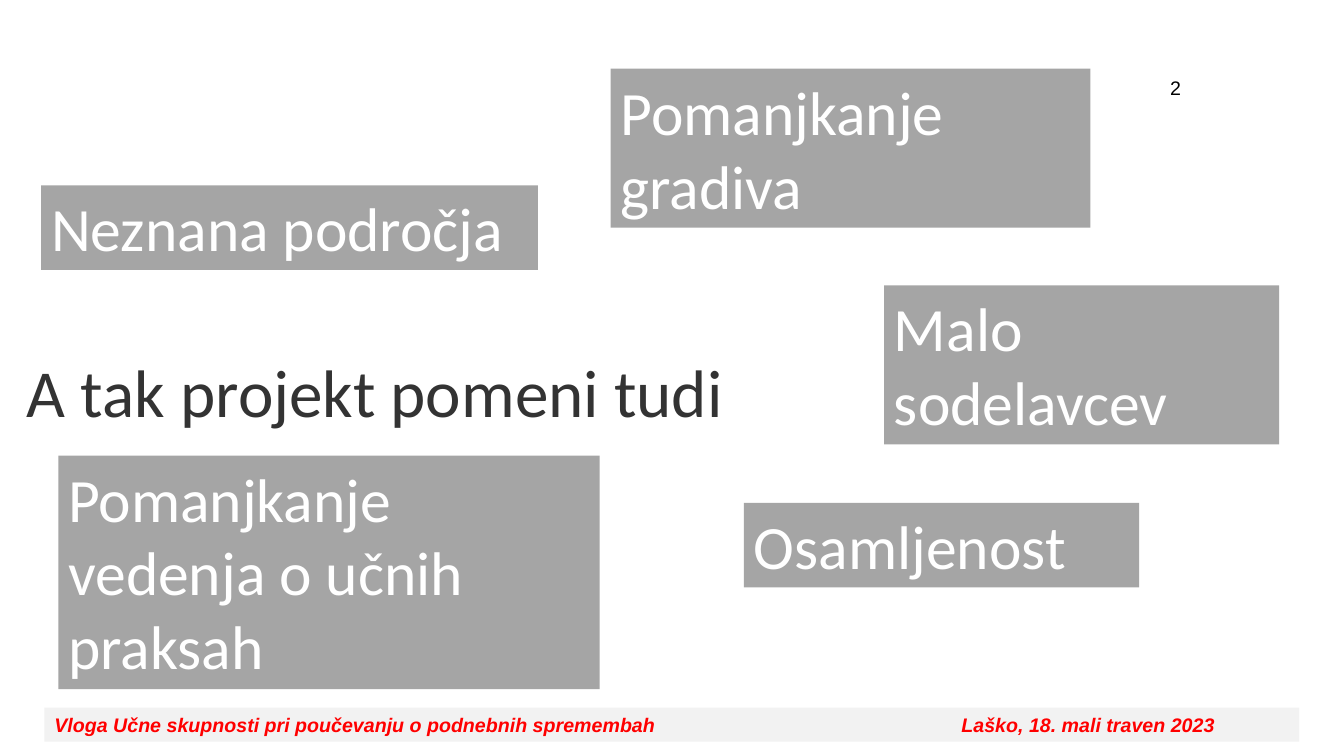
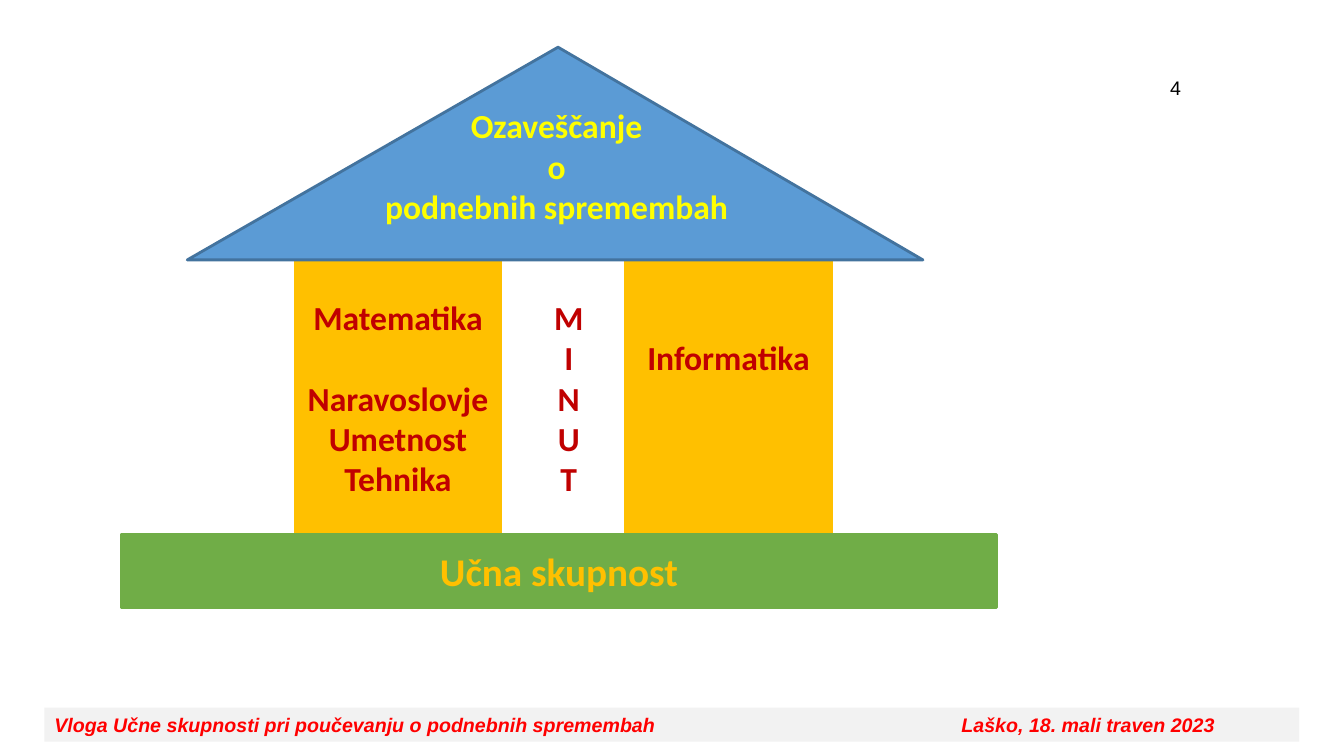
from lxml import etree
from pptx import Presentation
from pptx.dml.color import RGBColor
from pptx.enum.shapes import MSO_SHAPE
from pptx.enum.text import MSO_ANCHOR, PP_ALIGN
from pptx.oxml.ns import qn
from pptx.util import Cm, Pt

RED, GOLD, GREY, WHITE = "C00000", "FFC000", "A5A5A5", "FFFFFF"
LINE_CM = 1.03  # height of one 24 pt line

PAGE_NUMBER = dict(name="Arial", size=Pt(14))
FOOTER = dict(name="Arial", size=Pt(14), bold=True, italic=True)
TITLE = dict(name="Calibri", size=Pt(48))
KEYWORD = dict(name="Calibri", size=Pt(44))
LABEL = dict(name="Calibri", size=Pt(24), bold=True)
BASE_LABEL = dict(name="Calibri", size=Pt(28), bold=True)


def rgb(value):
    return RGBColor.from_string(value)


def add_box(s, box, lines, font, color, fill=None, line=None,
            shape=MSO_SHAPE.RECTANGLE, align=PP_ALIGN.LEFT, anchor=MSO_ANCHOR.TOP):
    """Add a text box, or a preset shape when a fill is given, one paragraph per line."""
    place = [Cm(v) for v in box]
    if fill:
        sp = s.shapes.add_shape(shape, *place)
        sp.shadow.inherit = False
        sp.fill.solid()
        sp.fill.fore_color.rgb = rgb(fill)
        if line:
            sp.line.color.rgb = rgb(line)
            sp.line.width = Pt(2)
        else:
            sp.line.fill.background()
    else:
        sp = s.shapes.add_textbox(*place)
    tf = sp.text_frame
    tf.word_wrap = True
    tf.vertical_anchor = anchor
    for i, text in enumerate(lines):
        p = tf.add_paragraph() if i else tf.paragraphs[0]
        p.alignment = align
        r = p.add_run()
        r.text = text
        r.font.color.rgb = rgb(color)
        for key, value in font.items():
            setattr(r.font, key, value)
    return sp


prs = Presentation()
prs.slide_width, prs.slide_height = Cm(33.87), Cm(19.05)

# Page number and footer band on both slides
slides = []
for number in ("2", "4"):
    s = prs.slides.add_slide(prs.slide_layouts[6])
    slides.append(s)
    add_box(s, (29.24, 1.8, 1.3, 0.86), [number], PAGE_NUMBER, "000000")
    footer = add_box(
        s, (1.12, 17.83, 31.62, 0.86),
        ["Vloga Učne skupnosti pri poučevanju o podnebnih spremembah\tLaško, 18. mali traven 2023"],
        FOOTER, "FF0000", fill="EDEDED", anchor=MSO_ANCHOR.MIDDLE)
    band_color = footer._element.spPr.find(qn("a:solidFill"))[0]
    etree.SubElement(band_color, qn("a:alpha")).set("val", "71000")
    pPr = footer.text_frame.paragraphs[0]._p.get_or_add_pPr()
    tabs = etree.SubElement(pPr, qn("a:tabLst"))
    tab = etree.SubElement(tabs, qn("a:tab"))
    tab.set("pos", str(Cm(22.86)))
    tab.set("algn", "l")

# Slide with the difficulties
s = slides[0]
title = add_box(s, (0.43, 7.57, 33, 3.43), ["A tak projekt pomeni tudi"],
                TITLE, "333333", anchor=MSO_ANCHOR.BOTTOM)
title.text_frame.paragraphs[0].line_spacing = 0.9

for text, box in [
    ("Pomanjkanje gradiva", (15.39, 1.73, 12.09, 4.01)),
    ("Malo sodelavcev", (22.28, 7.19, 9.96, 4.01)),
    ("Neznana področja", (1.04, 4.67, 12.52, 2.13)),
    ("Osamljenost", (18.75, 12.67, 9.96, 2.13)),
    ("Pomanjkanje vedenja o učnih praksah", (1.47, 11.48, 13.64, 5.89)),
]:
    add_box(s, box, [text], KEYWORD, WHITE, fill=GREY)

# Slide with the house: columns, roof and base
s = slides[1]
centred = dict(align=PP_ALIGN.CENTER, anchor=MSO_ANCHOR.MIDDLE)
columns = []
for left, width, fill, lines in [
    (15.77, 5.18, GOLD, ["Informatika"]),
    (13.61, 1.45, WHITE, "MINUT"),
    (7.44, 5.18, GOLD, ["Matematika", "Naravoslovje", "Umetnost", "Tehnika"]),
]:
    columns.append(add_box(s, (left, 6.58, width, 6.88), lines, LABEL, RED,
                           fill=fill, line=fill, **centred))
informatics, _, subjects = columns
subjects.text_frame.paragraphs[0].space_after = Pt(29)

roof = add_box(s, (4.72, 1.19, 18.54, 5.36), ["Ozaveščanje", "o", "podnebnih spremembah"],
               LABEL, "FFFF00", fill="5B9BD5", line="43739E",
               shape=MSO_SHAPE.ISOSCELES_TRIANGLE, **centred)
roof.adjustments[0] = 0.504

# Lift these centred texts by one line
for sp in (informatics, roof):
    sp.text_frame.margin_bottom = Cm(0.13 + 2 * LINE_CM)

add_box(s, (3.05, 13.46, 22.07, 1.85), ["Učna skupnost"], BASE_LABEL, GOLD,
        fill="70AD47", line="70AD47", **centred)

prs.save("out.pptx")
